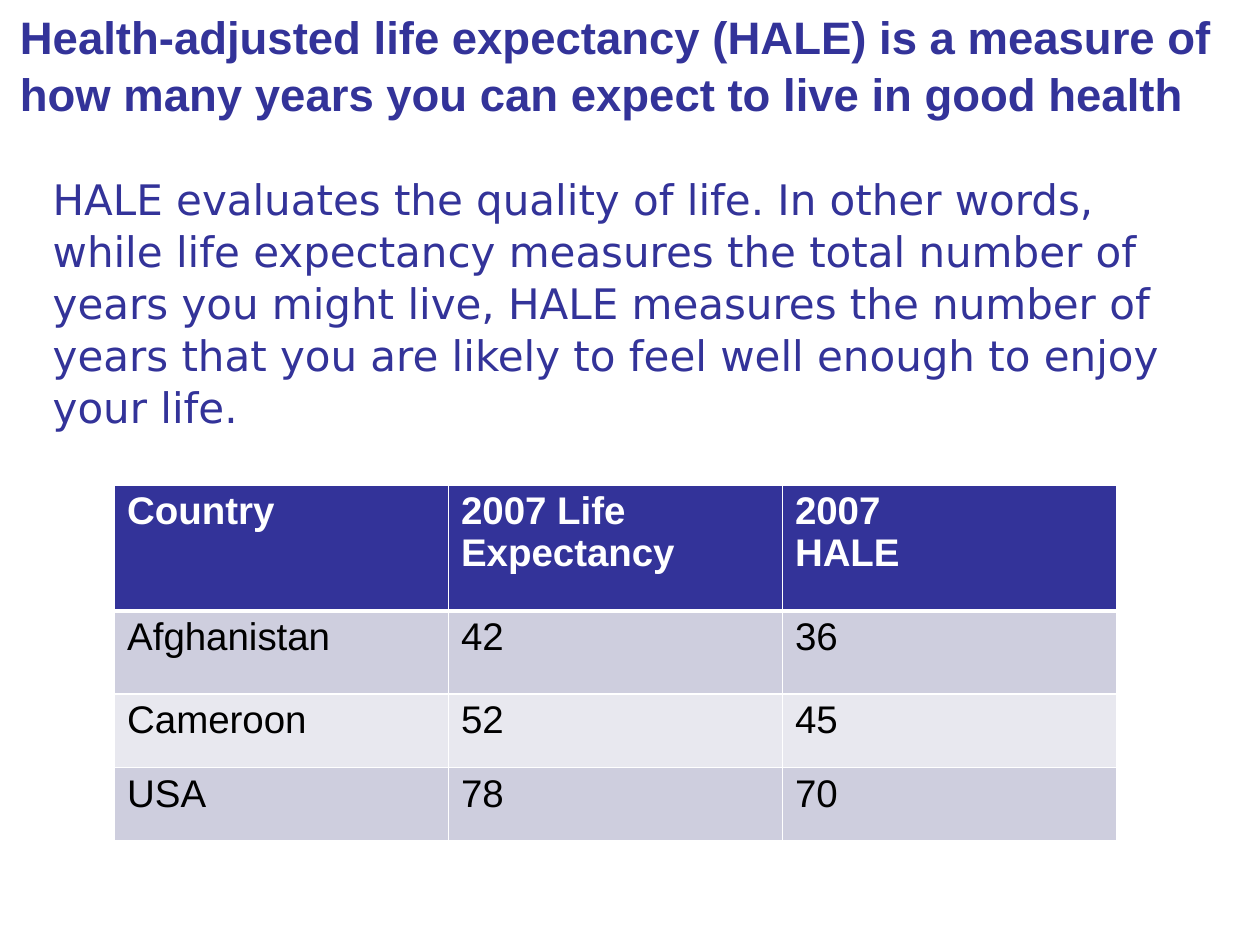
from lxml import etree
from pptx import Presentation
from pptx import util as u
from pptx.dml.color import RGBColor
from pptx.oxml.ns import qn

INK, WHITE, BLACK = "333399", "FFFFFF", "000000"
BANDS = ["CECEDE", "E8E8EF"]


def write(par, words, size, face, hue, bold, lead):
    par.line_spacing = lead
    run = par.add_run()
    run.text = words
    font = run.font
    font.size, font.name, font.bold = u.Pt(size), face, bold
    font.color.rgb = RGBColor.from_string(hue)


def edge(cell, side, width):
    props = cell._tc.get_or_add_tcPr()
    line = etree.SubElement(props, qn("a:" + side), w=str(u.Pt(width)))
    fill = etree.SubElement(line, qn("a:solidFill"))
    etree.SubElement(fill, qn("a:srgbClr"), val=WHITE)


deck = Presentation()
deck.slide_width, deck.slide_height = u.Inches(10), u.Inches(7.5)
slide = deck.slides.add_slide(deck.slide_layouts[6])

notes = [
    ((0.32, 1.32, 9.36, 2.2), "HALE evaluates the quality of life. In other words, while life expectancy "
     "measures the total number of years you might live, HALE measures the number of years "
     "that you are likely to feel well enough to enjoy your life.", 24, "DejaVu Sans", False, 1.03),
    ((0.06, 0, 10, 0.89), "Health-adjusted life expectancy (HALE) is a measure of how many years "
     "you can expect to live in good health", 26, "Arial", True, 1.05),
]
for place, words, size, face, bold, lead in notes:
    box = slide.shapes.add_textbox(*map(u.Inches, place))
    box.text_frame.word_wrap = True
    write(box.text_frame.paragraphs[0], words, size, face, INK, bold, lead)

rows = [
    ["Country", "2007 Life Expectancy", "2007\nHALE"],
    ["Afghanistan", "42", "36"],
    ["Cameroon", "52", "45"],
    ["USA", "78", "70"],
]
highs = [1, 0.66, 0.58, 0.58]
wide = 2.65
grid = slide.shapes.add_table(
    len(rows), 3, u.Inches(0.91), u.Inches(3.85), u.Inches(3 * wide), u.Inches(sum(highs))
).table
for col in grid.columns:
    col.width = u.Inches(wide)
for r, (high, row) in enumerate(zip(highs, rows)):
    grid.rows[r].height = u.Inches(high)
    head = r == 0
    for c, words in enumerate(row):
        cell = grid.cell(r, c)
        for side in ("lnL", "lnR", "lnT", "lnB"):
            thick = (head and side == "lnB") or (r == 1 and side == "lnT")
            edge(cell, side, 3 if thick else 1)
        cell.fill.solid()
        cell.fill.fore_color.rgb = RGBColor.from_string(INK if head else BANDS[(r - 1) % 2])
        frame = cell.text_frame
        for i, part in enumerate(words.split("\n")):
            par = frame.add_paragraph() if i else frame.paragraphs[0]
            write(par, part, 22, "Arial", WHITE if head else BLACK, head, 0.97)

deck.save("out.pptx")
